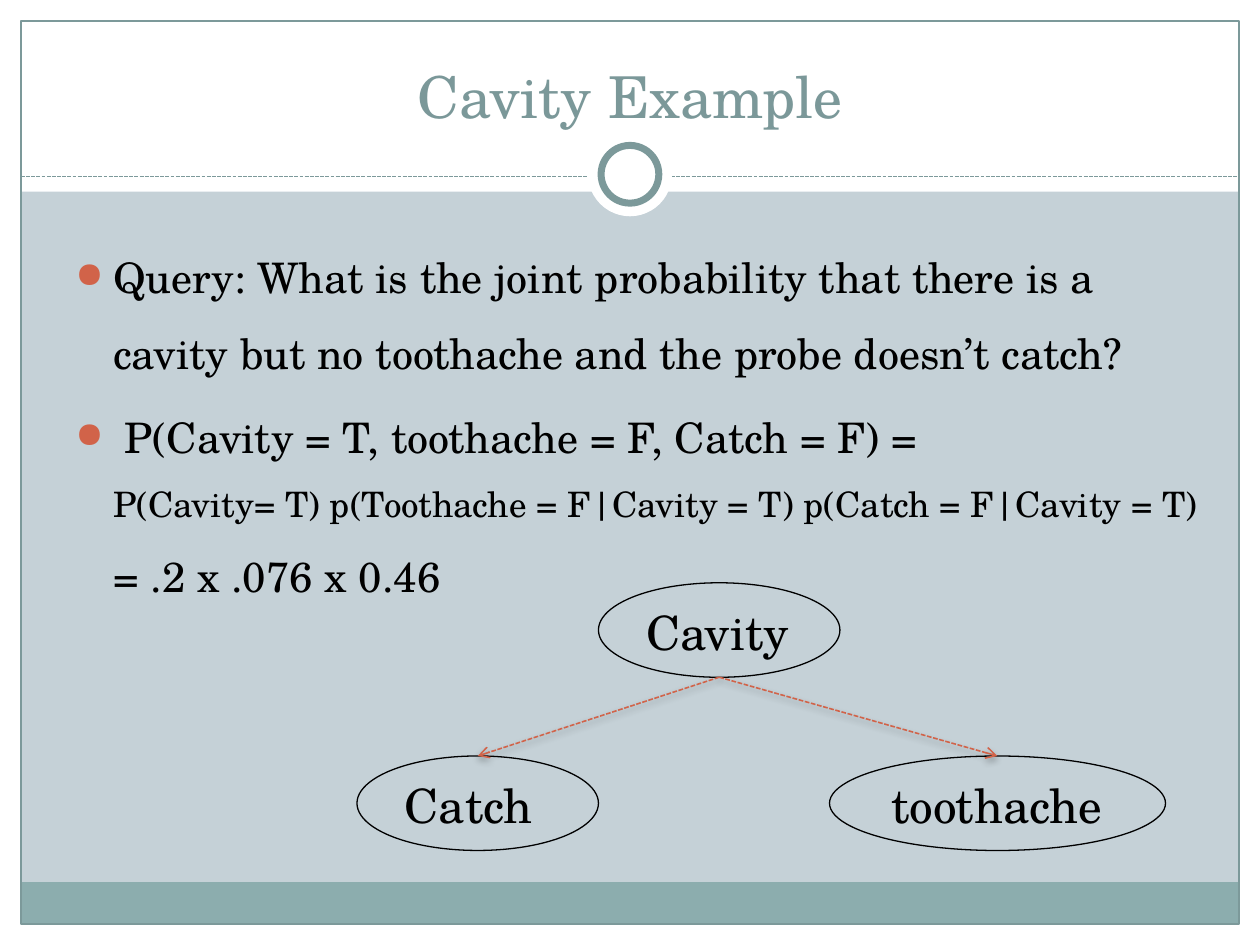
import dataclasses
import pptx
import pptx.util
import pptx.dml.color
import pptx.enum.dml
import pptx.enum.shapes
import pptx.enum.text
import pptx.oxml
import pptx.oxml.ns

COLS, ROWS = 120, 90
Pt = pptx.util.Pt
Shape = pptx.enum.shapes.MSO_SHAPE
Anchor = pptx.enum.text.MSO_ANCHOR
NS = pptx.oxml.ns.nsdecls("a")


@dataclasses.dataclass(frozen=True)
class Theme:
    font: str = "TeX Gyre Schola"
    back: str = "C5D1D7"
    white: str = "FFFFFF"
    black: str = "000000"
    foot: str = "8CADAE"
    rule: str = "7C999A"
    head: str = "7B9899"
    warm: str = "D16349"
    title: int = 33
    text: int = 24
    small: int = 20
    node: int = 27
    thin: float = 0.75
    arrow: float = 0.9
    ring: int = 4


T = Theme()
deck = pptx.Presentation()
deck.slide_width = pptx.util.Inches(10)
deck.slide_height = pptx.util.Inches(7.5)
CELL = deck.slide_width / COLS


def grid(*spots):
    return [round(spot * CELL) for spot in spots]


def tint(name):
    return pptx.dml.color.RGBColor.from_string(name)


def style(para, size, color):
    for run in para.runs:
        run.font.name = T.font
        run.font.size = Pt(size)
        run.font.color.rgb = tint(color)


def hang(para, size, bullet=False):
    props = para._p.get_or_add_pPr()
    props.set("marL", str(round(0.3 * pptx.util.Inches(1))))
    props.set("indent", str(round(-0.3 * pptx.util.Inches(1))))
    para.space_before = Pt(size * 0.2)
    if bullet:
        for part in (
            f'<a:buClr {NS}><a:srgbClr val="{T.warm}"/></a:buClr>',
            f'<a:buSzPct {NS} val="85000"/>',
            f'<a:buChar {NS} char="●"/>',
        ):
            props.append(pptx.oxml.parse_xml(part))


def draw(slide, kind, box, fill=None, line=None, width=T.thin):
    shape = slide.shapes.add_shape(kind, *grid(*box))
    shape.shadow.inherit = False
    if fill:
        shape.fill.solid()
        shape.fill.fore_color.rgb = tint(fill)
    else:
        shape.fill.background()
    if line:
        shape.line.color.rgb = tint(line)
        shape.line.width = Pt(width)
    else:
        shape.line.fill.background()
    return shape


def dash(slide, start, end, color, width, effect=""):
    link = slide.shapes.add_connector(
        pptx.enum.shapes.MSO_CONNECTOR.STRAIGHT, *grid(*start, *end))
    link.line.color.rgb = tint(color)
    link.line.width = Pt(width)
    link.line.dash_style = pptx.enum.dml.MSO_LINE.SQUARE_DOT
    link._element.spPr.append(
        pptx.oxml.parse_xml(f"<a:effectLst {NS}>{effect}</a:effectLst>"))
    return link


def frame(slide, box):
    left, top, wide, high = box
    edge, band, foot = 2, 18.25, 4
    right, base = left + wide, top + high
    for side in (
        (left, base - edge, wide, edge),
        (left, top, wide, band),
        (left, top, edge, high),
        (right - edge, top, edge, high),
    ):
        draw(slide, Shape.RECTANGLE, side, T.white)
    inner = wide - 2 * edge
    draw(slide, Shape.RECTANGLE,
         (left + edge, base - edge - foot, inner, foot), T.foot)
    draw(slide, Shape.RECTANGLE,
         (left + edge, top + edge, inner, high - 2 * edge), line=T.rule)
    mid = top + 16.8
    dash(slide, (left + edge, mid), (right - edge, mid), T.rule, T.thin)
    for size, line in ((8, None), (5.5, T.rule)):
        spot = (left + (wide - size) / 2, top + 16.6 - size / 2, size, size)
        draw(slide, Shape.OVAL, spot, T.white, line, T.ring)


def title(slide, box, words):
    head = slide.shapes.title
    slide.shapes._spTree.append(head._element)
    head.left, head.top, head.width, head.height = grid(*box)
    head.text_frame.text = words
    head.text_frame.vertical_anchor = Anchor.BOTTOM
    para = head.text_frame.paragraphs[0]
    para.alignment = pptx.enum.text.PP_ALIGN.CENTER
    style(para, T.title, T.head)


def body(slide, box, items):
    frame = slide.shapes.add_textbox(*grid(*box)).text_frame
    frame.word_wrap = True
    for spot, lines in enumerate(items):
        para = frame.paragraphs[0] if spot == 0 else frame.add_paragraph()
        para.text = "\v".join(words for words, size in lines)
        para.line_spacing = 1.5
        hang(para, T.text, bullet=True)
        style(para, T.text, T.black)
        for run, (words, size) in zip(para.runs, lines):
            run.font.size = Pt(size)


def node(slide, box, words):
    oval = draw(slide, Shape.OVAL, box, line=T.black)
    frame = oval.text_frame
    frame.text = words
    frame.vertical_anchor = Anchor.TOP
    para = frame.paragraphs[0]
    para.alignment = pptx.enum.text.PP_ALIGN.LEFT
    hang(para, T.node)
    style(para, T.node, T.black)
    return oval


def tree(slide, box, root, leaves):
    left, top, wide, high = box
    size = 9
    col, span, words = root
    node(slide, (left + col, top, span, size), words)
    start = (left + col + span / 2, top + size)
    low = top + high - size
    ovals = [node(slide, (left + col, low, span, size), words)
             for col, span, words in leaves]
    shade = (f'<a:outerShdw blurRad="{Pt(4)}" dist="{Pt(2)}" dir="5400000" '
             f'rotWithShape="0"><a:srgbClr val="{T.black}">'
             '<a:alpha val="35000"/></a:srgbClr></a:outerShdw>')
    for oval in ovals:
        link = dash(slide, start, (start[0], low), T.warm, T.arrow, shade)
        link.end_connect(oval, 0)
        link.line._get_or_add_ln().append(
            pptx.oxml.parse_xml(f'<a:tailEnd {NS} type="arrow"/>'))


def main():
    slide = deck.slides.add_slide(deck.slide_layouts[5])
    slide.background.fill.solid()
    slide.background.fill.fore_color.rgb = tint(T.back)
    frame(slide, (0, 0, COLS, ROWS))
    title(slide, (4, 3, 112, 10), "Cavity Example")
    body(slide, (6, 21, 111, 55), [
        [("Query: What is the joint probability that there is a cavity "
          "but no toothache and the probe doesn’t catch?", T.text)],
        [(" P(Cavity = T, toothache = F, Catch = F) = ", T.text),
         ("P(Cavity= T) p(Toothache = F|Cavity = T) "
          "p(Catch = F|Cavity = T) ", T.small),
         ("= .2 x .076 x 0.46", T.text)],
    ])
    tree(slide, (34, 55.5, 77, 25.5), (23, 23, "Cavity"),
         [(0, 23, "Catch"), (45, 32, "toothache")])
    deck.save("out.pptx")


if __name__ == "__main__":
    main()
